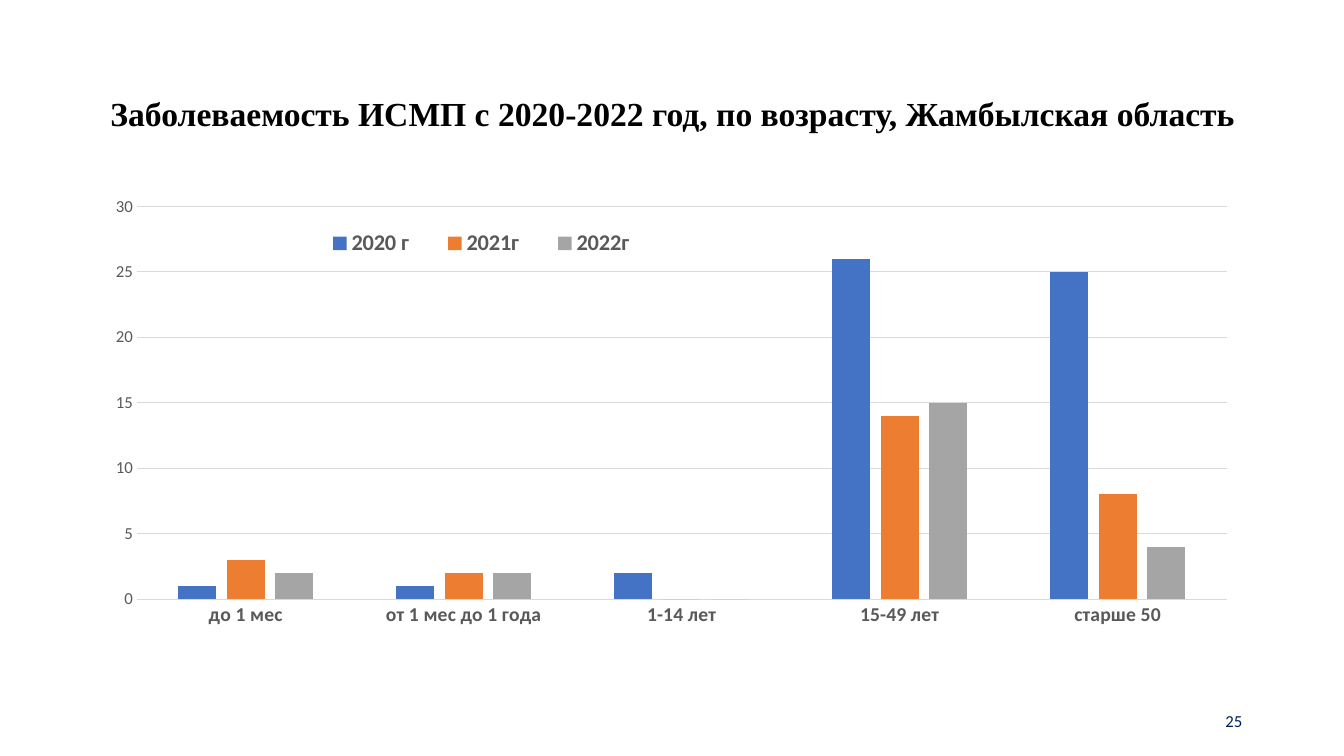
from dataclasses import dataclass

from lxml import etree
from pptx import Presentation
from pptx import util as u
from pptx.chart.data import CategoryChartData
from pptx.dml.color import RGBColor
from pptx.enum import chart as ch, text
from pptx.oxml.ns import qn


@dataclass
class Theme:
    title_font: str = "Times New Roman"
    body_font: str = "Calibri"
    title: str = "000000"
    label: str = "595959"
    grid: str = "D9D9D9"
    number: str = "002060"
    series: tuple = ("4472C4", "ED7D31", "A5A5A5")
    title_size: int = 24
    legend_size: int = 16
    category_size: int = 14
    small_size: int = 12


theme = Theme()


def add_text(content, *, box, font, size, color, bold=False, align):
    """Place one middle-anchored line of text on the slide."""
    sp = s.shapes.add_textbox(*[u.Inches(v) for v in box])
    tf = sp.text_frame
    tf.word_wrap = True
    tf.vertical_anchor = text.MSO_ANCHOR.MIDDLE
    p = tf.paragraphs[0]
    p.alignment = align
    r = p.add_run()
    r.text = content
    r.font.name, r.font.size, r.font.bold = font, u.Pt(size), bold
    r.font.color.rgb = RGBColor.from_string(color)


def set_layout(parent, index, inner=False, **box):
    """Fix the place of a chart part, in fractions of the chart."""
    for old in parent.findall(qn("c:layout")):
        parent.remove(old)
    layout = etree.Element(qn("c:layout"))
    manual = etree.SubElement(layout, qn("c:manualLayout"))
    settings = {"layoutTarget": "inner"} if inner else {}
    settings.update(xMode="edge", yMode="edge", **box)
    for name, value in settings.items():
        etree.SubElement(manual, qn("c:" + name)).set("val", str(value))
    parent.insert(index, layout)


prs = Presentation()
prs.slide_width, prs.slide_height = u.Inches(13.33), u.Inches(7.5)
s = prs.slides.add_slide(prs.slide_layouts[6])

# Title
add_text("Заболеваемость ИСМП с 2020-2022 год, по возрасту, Жамбылская область",
         box=(0.92, 0.4, 11.5, 1.45), font=theme.title_font, size=theme.title_size,
         color=theme.title, bold=True, align=text.PP_ALIGN.CENTER)

# Cases by age group
data = CategoryChartData()
data.categories = ["до 1 мес", "от 1 мес до 1 года", "1-14 лет", "15-49 лет", "старше 50"]
data.add_series("2020 г", (1, 1, 2, 26, 25))
data.add_series("2021г", (3, 2, 0, 14, 8))
data.add_series("2022г", (2, 2, 0, 15, 4))
chart = s.shapes.add_chart(
    ch.XL_CHART_TYPE.COLUMN_CLUSTERED, u.Inches(0.92), u.Inches(1.85),
    u.Inches(11.5), u.Inches(4.91), data).chart
chart.has_title = False
chart.font.name = theme.body_font

# Columns
plot = chart.plots[0]
plot.gap_width, plot.overlap, plot.vary_by_categories = 219, -27, False
for series, color in zip(plot.series, theme.series):
    series.format.fill.solid()
    series.format.fill.fore_color.rgb = RGBColor.from_string(color)

# Axes and gridlines
cat_axis, val_axis = chart.category_axis, chart.value_axis
val_axis.minimum_scale, val_axis.maximum_scale, val_axis.major_unit = 0, 30, 5
val_axis.has_major_gridlines = True
for axis in (cat_axis, val_axis):
    axis.major_tick_mark = axis.minor_tick_mark = ch.XL_TICK_MARK.NONE
for line in (cat_axis.format.line, val_axis.major_gridlines.format.line):
    line.color.rgb = RGBColor.from_string(theme.grid)
    line.width = u.Pt(0.75)
val_axis.format.line.fill.background()

# Legend over the plot
chart.has_legend = True
legend = chart.legend
legend.position = ch.XL_LEGEND_POSITION.BOTTOM
legend.include_in_layout = False

# Label fonts
for font, size, bold in (
    (cat_axis.tick_labels.font, theme.category_size, True),
    (val_axis.tick_labels.font, theme.small_size, False),
    (legend.font, theme.legend_size, True),
):
    font.name, font.size, font.bold = theme.body_font, u.Pt(size), bold
    font.color.rgb = RGBColor.from_string(theme.label)

# Places inside the chart
plot_area = chart.element.find(".//" + qn("c:plotArea"))
legend_box = chart.element.find(".//" + qn("c:legend"))
set_layout(plot_area, 0, inner=True, x=0.038, y=0.04, w=0.94, h=0.794)
set_layout(legend_box, 1, x=0.18, y=0.08, w=0.31, h=0.07)

# Slide number
add_text("25", box=(9.42, 6.95, 3, 0.4), font=theme.body_font, size=theme.small_size,
         color=theme.number, align=text.PP_ALIGN.RIGHT)

prs.save("out.pptx")
